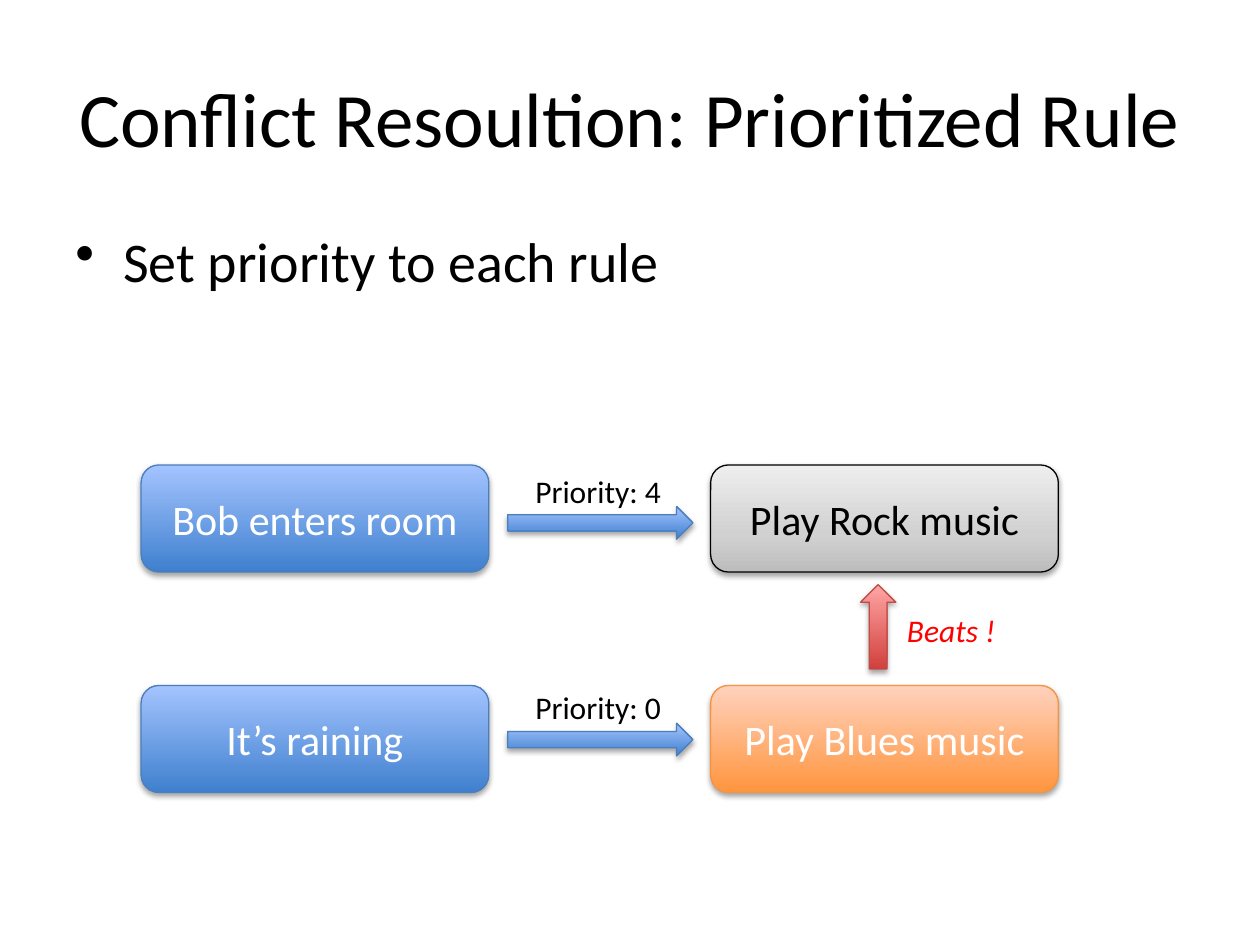
import copy
import pptx
import pptx.dml.color
import pptx.enum.shapes
import pptx.enum.text
import pptx.oxml
import pptx.oxml.ns
import pptx.util
from lxml import etree

SHAPE = pptx.enum.shapes.MSO_SHAPE
ALIGN = pptx.enum.text.PP_ALIGN
MID = pptx.enum.text.MSO_ANCHOR.MIDDLE
QN = pptx.oxml.ns.qn
WIDE, HIGH = 10, 7.5

# Themes: line colour, then gradient stops from bottom to top
BLUE = ("4B7EBC", [(0, "3F80CE"), (1, "A4C4FF")])
GRAY = ("000000", [(0, "BDBDBD"), (0.35, "D1D1D1"), (1, "EEEEEE")])
GOLD = ("F69240", [(0, "FF953E"), (1, "FFD2BD")])
RED = ("BF4C48", [(0, "D1403C"), (1, "FFA6A5")])

# Rule grid: condition, arrow and action columns
CARD_W, CARD_H = 2.76, 0.85
ACT_X = 4.52
ARROW_X, ARROW_W, ARROW_H = 2.91, 1.47, 0.26
ROW_GAP = 1.75


def color(code):
    return pptx.dml.color.RGBColor.from_string(code)


def inches(box):
    return [pptx.util.Inches(n) for n in box]


def style(para, size, code, italic=None):
    font = para.font
    font.name, font.size, font.italic = "Calibri", pptx.util.Pt(size), italic
    font.color.rgb = color(code)


def paint(shape, theme):
    """Give a shape its gradient, outline and soft shadow."""
    edge, stops = theme
    shape.fill.gradient()
    shape.fill.gradient_angle = 90
    first = shape._element.spPr.find(".//" + QN("a:gs"))
    for _ in stops[2:]:
        first.addnext(copy.deepcopy(first))
    for stop, (place, code) in zip(shape.fill.gradient_stops, stops):
        stop.position = place
        stop.color.rgb = color(code)
    shape.line.color.rgb = color(edge)
    shape.line.width = pptx.util.Pt(0.75)
    shape.shadow.inherit = False
    glow = shape._element.spPr.find(QN("a:effectLst"))
    cast = etree.SubElement(
        glow, QN("a:outerShdw"), blurRad=str(pptx.util.Pt(3.1)),
        dist=str(pptx.util.Pt(1.8)), dir="5400000", rotWithShape="0")
    tint = etree.SubElement(cast, QN("a:srgbClr"), val="000000")
    etree.SubElement(tint, QN("a:alpha"), val="35000")


def add_form(slide, kind, box, theme):
    shape = slide.shapes.add_shape(kind, *inches(box))
    paint(shape, theme)
    return shape


def add_card(slide, box, text, theme, ink="FFFFFF"):
    frame = add_form(slide, SHAPE.ROUNDED_RECTANGLE, box, theme).text_frame
    frame.vertical_anchor = MID
    para = frame.paragraphs[0]
    para.text, para.alignment = text, ALIGN.CENTER
    style(para, 24, ink)


def add_label(slide, box, text, code="000000", italic=None):
    frame = slide.shapes.add_textbox(*inches(box)).text_frame
    frame.word_wrap = False
    frame.auto_size = pptx.enum.text.MSO_AUTO_SIZE.SHAPE_TO_FIT_TEXT
    frame.paragraphs[0].text = text
    style(frame.paragraphs[0], 18, code, italic)


def add_title(slide, box, text):
    head = slide.shapes.title
    head.left, head.top, head.width, head.height = inches(box)
    head.text_frame.vertical_anchor = MID
    para = head.text_frame.paragraphs[0]
    para.text, para.alignment = text, ALIGN.CENTER
    style(para, 44, "000000")


def add_body(slide, box, text):
    frame = slide.shapes.add_textbox(*inches(box)).text_frame
    frame.word_wrap = True
    para = frame.paragraphs[0]
    para.text = text
    para.space_before = pptx.util.Pt(6.4)
    style(para, 32, "000000")
    # Hanging bullet
    props = para._p.get_or_add_pPr()
    hang = pptx.util.Inches(0.38)
    props.set("marL", str(hang))
    props.set("indent", str(-hang))
    mark = pptx.oxml.parse_xml(
        '<a:buChar %s char="•"/>' % pptx.oxml.ns.nsdecls("a"))
    props.find(QN("a:defRPr")).addprevious(mark)


def add_rule(slide, left, top, rule):
    """Place condition, arrow and action in one row."""
    cause, note, act, theme, ink, drop, rise = rule
    add_card(slide, (left, top, CARD_W, CARD_H), cause, BLUE)
    add_card(slide, (left + ACT_X, top, CARD_W, CARD_H), act, theme, ink)
    add_form(slide, SHAPE.RIGHT_ARROW,
             (left + ARROW_X, top + drop, ARROW_W, ARROW_H), BLUE)
    add_label(slide, (left + ARROW_X + 0.12, top + rise, 1.21, 0.4), note)


def add_rules(slide, left, top):
    rules = [
        ("Bob enters room", "Priority: 4", "Play Rock music",
         GRAY, "000000", 0.33, 0.01),
        ("It’s raining", "Priority: 0", "Play Blues music",
         GOLD, "FFFFFF", 0.3, -0.03),
    ]
    for row, rule in enumerate(rules):
        add_rule(slide, left, top + row * ROW_GAP, rule)
    # The winning rule
    rise = top + CARD_H + 0.1
    add_form(slide, SHAPE.UP_ARROW, (left + 5.71, rise, 0.28, 0.67), RED)
    add_label(slide, (left + 5.98, rise + 0.16, 0.97, 0.4),
              "Beats !", "FF0000", True)


def main():
    deck = pptx.Presentation()
    deck.slide_width, deck.slide_height = inches((WIDE, HIGH))
    slide = deck.slides.add_slide(deck.slide_layouts[5])
    edge, span = WIDE * 0.05, WIDE * 0.9
    add_title(slide, (edge, HIGH * 0.04, span, 1.25),
              "Conflict Resoultion: Prioritized Rule")
    add_body(slide, (edge, 1.75, span, HIGH * 0.66),
             "Set priority to each rule")
    add_rules(slide, 1.12, 3.69)
    deck.save("out.pptx")


if __name__ == "__main__":
    main()
